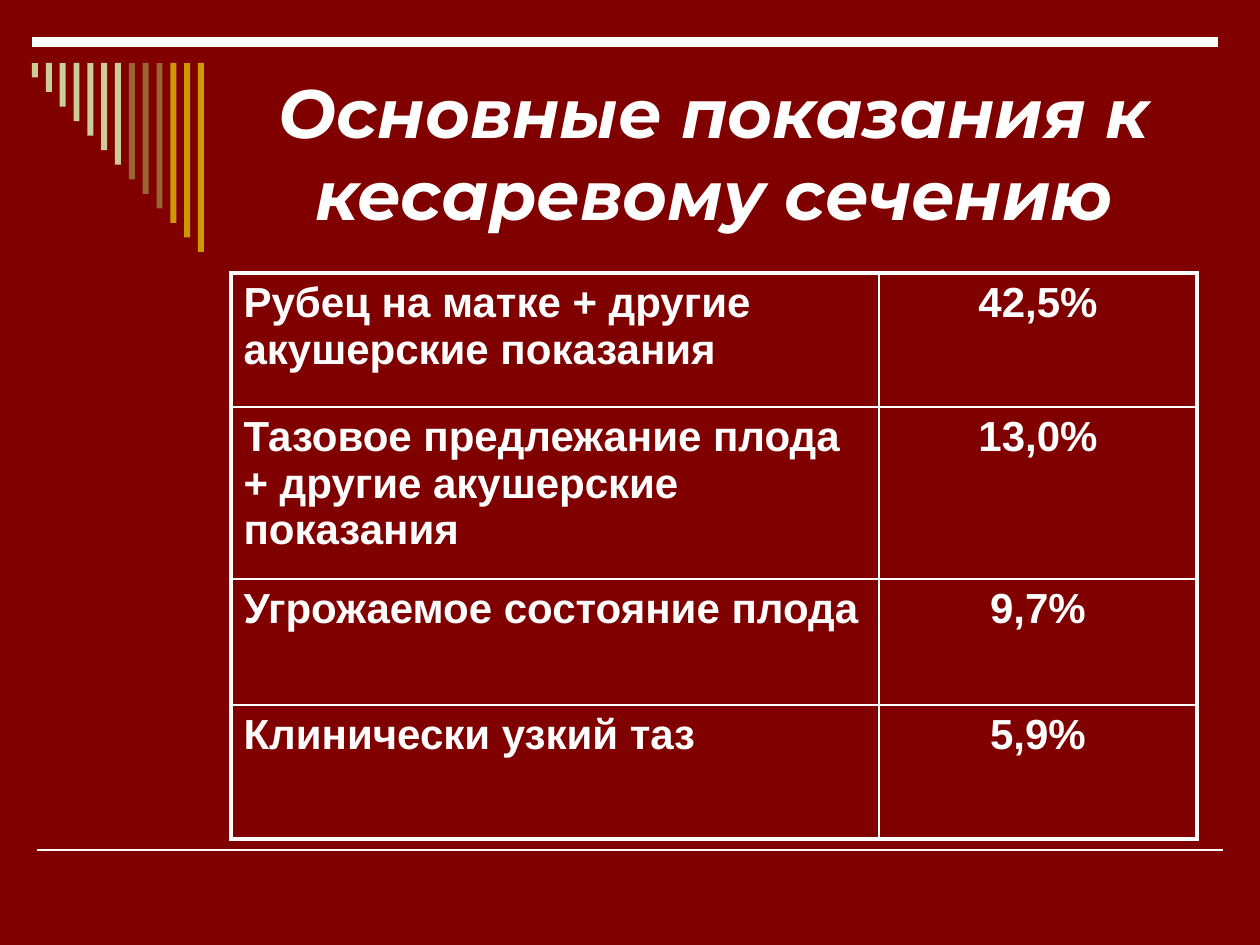
from lxml import etree
from pptx import Presentation
from pptx.dml.color import RGBColor
from pptx.enum.shapes import MSO_CONNECTOR, MSO_SHAPE
from pptx.enum.text import MSO_ANCHOR, MSO_AUTO_SIZE, PP_ALIGN
from pptx.oxml.ns import qn
from pptx.util import Pt

STRAIGHT = MSO_CONNECTOR.STRAIGHT
RECTANGLE = MSO_SHAPE.RECTANGLE
MIDDLE = MSO_ANCHOR.MIDDLE
NO_AUTOFIT = MSO_AUTO_SIZE.NONE
LEFT, CENTER = PP_ALIGN.LEFT, PP_ALIGN.CENTER

EMU_PER_PX = 914400 / 126
TITLE_ONLY = 5
WHITE, BACKGROUND = "FFFFFF", "800000"
BAR_COLORS = ["CCCC99"] * 7 + ["996633"] * 3 + ["CC9900"] * 3

TITLE = "Основные показания к кесаревому сечению"
INDICATIONS = [
    ("Рубец на матке + другие акушерские показания", "42,5%"),
    ("Тазовое предлежание плода + другие акушерские показания", "13,0%"),
    ("Угрожаемое состояние плода", "9,7%"),
    ("Клинически узкий таз", "5,9%"),
]
COLUMN_WIDTHS = [648, 318]
ROW_HEIGHTS = [134, 172, 126, 134]
INNER_BORDER, OUTER_BORDER = 1, 2.25


def px(length):
    return round(length * EMU_PER_PX)


def color(hex_string):
    return RGBColor.from_string(hex_string)


def style_text(paragraph, font_name, size, alignment, italic=False):
    paragraph.alignment = alignment
    font = paragraph.font
    font.name, font.size = font_name, Pt(size)
    font.bold, font.italic = True, italic
    font.color.rgb = color(WHITE)


def add_rule(slide, left, top, width, weight):
    line = slide.shapes.add_connector(
        STRAIGHT, px(left), px(top), px(left + width), px(top))
    line.line.color.rgb = color(WHITE)
    line.line.width = Pt(weight)
    etree.SubElement(line._element.spPr, qn("a:effectLst"))


def add_bars(slide, left, top, width, height):
    """Hanging bars that grow evenly from left to right."""
    bar_width = 6
    count = len(BAR_COLORS)
    pitch = (width - bar_width) / (count - 1)
    group = slide.shapes.add_group_shape()
    for index, bar_color in enumerate(BAR_COLORS):
        bar = group.shapes.add_shape(
            RECTANGLE, px(left + index * pitch), px(top),
            px(bar_width), px(height * (index + 1) / count))
        bar.shadow.inherit = False
        bar.fill.solid()
        bar.fill.fore_color.rgb = color(bar_color)
        bar.line.fill.background()


def add_title(slide, left, top, width, height):
    title = slide.shapes.title
    title.left, title.top = px(left), px(top)
    title.width, title.height = px(width), px(height)
    frame = title.text_frame
    frame.text = TITLE
    frame.word_wrap = True
    frame.auto_size = NO_AUTOFIT
    frame.vertical_anchor = MIDDLE
    style_text(frame.paragraphs[0], "Montserrat", 39, CENTER, italic=True)


def set_borders(cell, weights):
    """Draw the left, right, top and bottom borders, in that order."""
    properties = cell._tc.get_or_add_tcPr()
    for position, (side, weight) in enumerate(zip("LRTB", weights)):
        border = etree.Element(qn(f"a:ln{side}"), w=str(Pt(weight)))
        fill = etree.SubElement(border, qn("a:solidFill"))
        etree.SubElement(fill, qn("a:srgbClr"), val=WHITE)
        properties.insert(position, border)


def add_indications_table(slide, left, top):
    last_row, last_column = len(ROW_HEIGHTS) - 1, len(COLUMN_WIDTHS) - 1
    table = slide.shapes.add_table(
        len(ROW_HEIGHTS), len(COLUMN_WIDTHS), px(left), px(top),
        px(sum(COLUMN_WIDTHS)), px(sum(ROW_HEIGHTS))).table
    table.first_row = table.horz_banding = False
    for column, width in zip(table.columns, COLUMN_WIDTHS):
        column.width = px(width)
    for row, height in zip(table.rows, ROW_HEIGHTS):
        row.height = px(height)

    for row_index, texts in enumerate(INDICATIONS):
        for column_index, text in enumerate(texts):
            cell = table.cell(row_index, column_index)
            cell.text = text
            cell.fill.background()
            style_text(cell.text_frame.paragraphs[0], "Arial", 24,
                       CENTER if column_index else LEFT)
            on_edge = [column_index == 0, column_index == last_column,
                       row_index == 0, row_index == last_row]
            set_borders(cell, [OUTER_BORDER if edge else INNER_BORDER
                               for edge in on_edge])


def main():
    presentation = Presentation()
    presentation.slide_width, presentation.slide_height = px(1260), px(945)
    slide = presentation.slides.add_slide(
        presentation.slide_layouts[TITLE_ONLY])
    slide.background.fill.solid()
    slide.background.fill.fore_color.rgb = color(BACKGROUND)

    # Frame decoration
    add_rule(slide, 37, 850, 1186, 1)
    add_rule(slide, 32, 42, 1186, 6)
    add_bars(slide, 32, 63, 172, 189)

    # Content
    add_title(slide, 231, 63, 966, 179)
    add_indications_table(slide, 231, 273)
    presentation.save("out.pptx")


if __name__ == "__main__":
    main()
